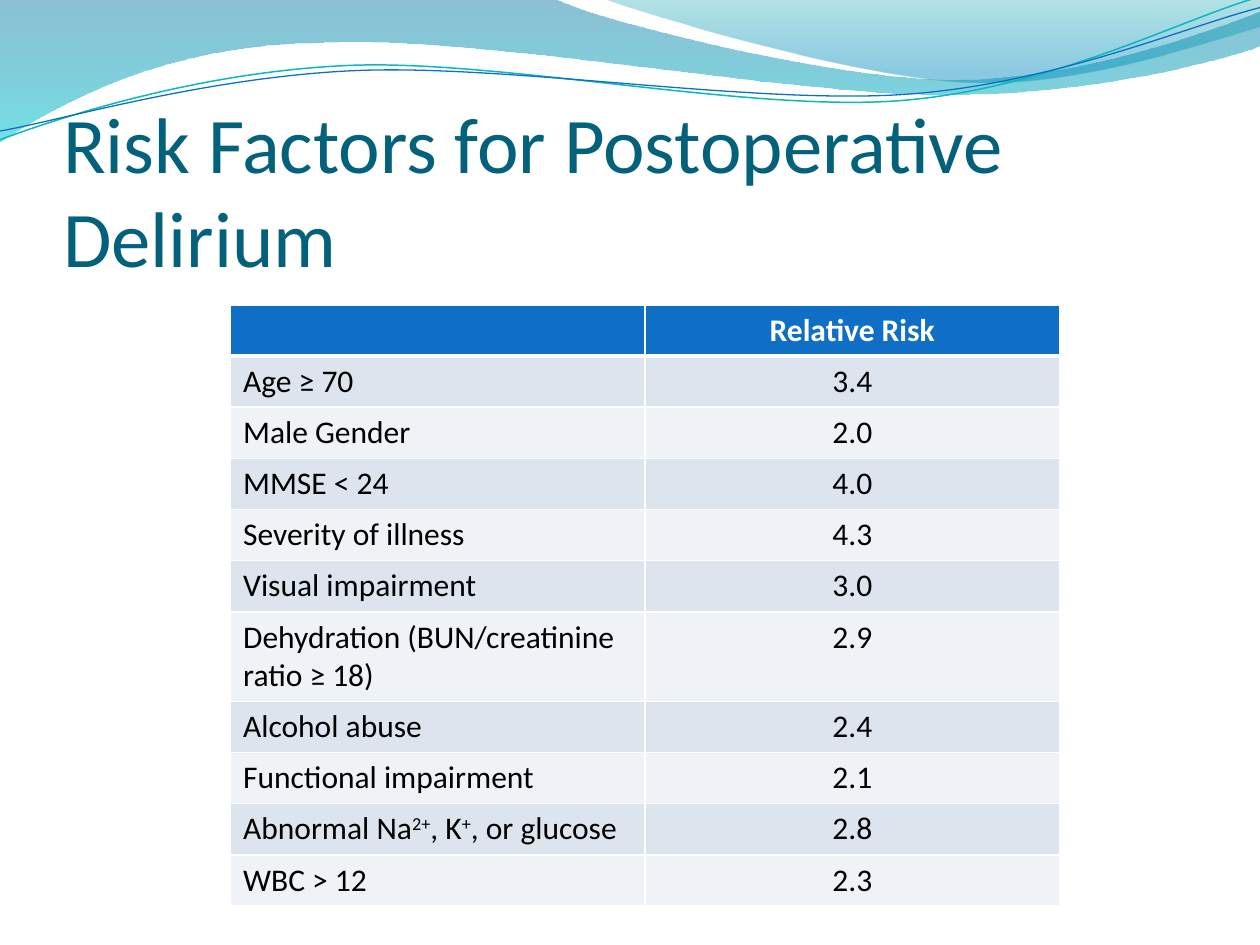
import math

import pptx
import pptx.dml.color
import pptx.enum.text
import pptx.oxml.ns
import pptx.util
from lxml import etree

Inches = pptx.util.Inches
Pt = pptx.util.Pt
RGBColor = pptx.dml.color.RGBColor
PP_ALIGN = pptx.enum.text.PP_ALIGN
qn = pptx.oxml.ns.qn

FONT = "Calibri"
TITLE_TEAL = RGBColor(0x04, 0x61, 0x7B)
HEADER_BLUE = RGBColor(0x0F, 0x6F, 0xC6)
BAND_DARK = RGBColor(0xDC, 0xE5, 0xEE)
BAND_LIGHT = RGBColor(0xEF, 0xF3, 0xF7)
WAVE_BLUE = RGBColor(0x00, 0x74, 0xA1)
WAVE_CYAN = RGBColor(0x00, 0xC6, 0xCF)
CREST_TEAL = RGBColor(0x00, 0xA1, 0xA9)
CREST_BLUE = RGBColor(0x00, 0x8B, 0xBF)
LINE_TEAL = RGBColor(0x0A, 0xB8, 0xBF)
WHITE = RGBColor(0xFF, 0xFF, 0xFF)
BLACK = RGBColor(0x00, 0x00, 0x00)

# Outlines in slide inches: a pair is a straight step,
# six numbers are a cubic curve (two controls and the end).
WAVE = [(0, -0.01), (4.4, -0.01),
        (4.76, 0.17, 6.64, 0.63, 7.58, 0.63), (8.53, 0.63, 9.58, 0.26, 10, 0.09),
        (10.01, 0.36),
        (9.83, 0.44, 8.7, 0.76, 7.46, 0.75), (6.22, 0.75, 3.82, 0.28, 2.57, 0.34),
        (1.29, 0.35, 0.46, 0.83, -0.01, 1.13), (0, -0.01)]
CREST = [(4.79, -0.01),
         (5.09, 0.11, 6.82, 0.62, 7.69, 0.65), (8.56, 0.69, 9.61, 0.32, 10, 0.21),
         (10, 0), (4.79, -0.01)]
TEAL_STRAND = [(0, 1.11),
               (0.48, 0.93, 1.58, 0.57, 2.77, 0.52), (3.95, 0.47, 5.93, 0.89, 7.13, 0.8),
               (8.33, 0.71, 9.38, 0.15, 9.98, -0.02)]
BLUE_STRAND = [(0, 1.04),
               (0.47, 0.96, 1.64, 0.61, 2.83, 0.56), (4.03, 0.51, 5.97, 0.83, 7.17, 0.75),
               (8.36, 0.67, 9.41, 0.21, 10, 0.06)]
STRAND_TILT = -2.7

# Each label is a list of (text, is superscript) runs
RISKS = [
    ([("Age ≥ 70", False)], "3.4"),
    ([("Male Gender", False)], "2.0"),
    ([("MMSE < 24", False)], "4.0"),
    ([("Severity of illness", False)], "4.3"),
    ([("Visual impairment", False)], "3.0"),
    ([("Dehydration (BUN/creatinine ratio ≥ 18)", False)], "2.9"),
    ([("Alcohol abuse", False)], "2.4"),
    ([("Functional impairment", False)], "2.1"),
    ([("Abnormal Na", False), ("2+", True), (", K", False), ("+", True),
      (", or glucose", False)], "2.8"),
    ([("WBC > 12", False)], "2.3"),
]
TALL_ROW = 6


def add_outline(slide, box, steps, close, tilt=0):
    """Draw the steps as one curved outline that fills the box, tilted in degrees."""
    left, top, width, height = (Inches(length) for length in box)
    ends = [(Inches(step[-2]), Inches(step[-1])) for step in steps]
    builder = slide.shapes.build_freeform(*ends[0])
    builder.add_line_segments(ends[1:], close=close)
    outline = builder.convert_to_shape()
    outline.shadow.inherit = False
    outline.left, outline.top, outline.width, outline.height = left, top, width, height
    outline.rotation = tilt % 360

    cos, sin = math.cos(math.radians(-tilt)), math.sin(math.radians(-tilt))

    def add_point(parent, x, y):
        dx, dy = Inches(x) - left - width / 2, Inches(y) - top - height / 2
        etree.SubElement(parent, qn("a:pt"),
                         x=str(round(dx * cos - dy * sin + width / 2)),
                         y=str(round(dx * sin + dy * cos + height / 2)))

    # Swap the straight segments for cubic ones
    curve = next(outline.element.iter(qn("a:path")))
    curve.set("w", str(width))
    curve.set("h", str(height))
    for segment in list(curve):
        curve.remove(segment)
    for i, step in enumerate(steps):
        tag = "a:moveTo" if i == 0 else "a:lnTo" if len(step) == 2 else "a:cubicBezTo"
        segment = etree.SubElement(curve, qn(tag))
        for x, y in zip(step[::2], step[1::2]):
            add_point(segment, x, y)
    if close:
        etree.SubElement(curve, qn("a:close"))
    return outline


def add_wave(slide, box, steps, stops):
    """Stops are (colour, position from 0 to 1, opacity in percent)."""
    wave = add_outline(slide, box, steps, True)
    wave.line.fill.background()
    wave.fill.gradient()
    wave.fill.gradient_angle = 270
    for stop, (color, position, _) in zip(wave.fill.gradient_stops, stops):
        stop.color.rgb = color
        stop.position = position
    for color_xml, (_, _, opacity) in zip(wave.element.iter(qn("a:srgbClr")), stops):
        etree.SubElement(color_xml, qn("a:alpha")).set("val", str(opacity * 1000))


def add_strand(slide, box, steps, color, width):
    strand = add_outline(slide, box, steps, False, STRAND_TILT)
    strand.fill.background()
    strand.line.color.rgb = color
    strand.line.width = Pt(width)


def add_wave_banner(slide):
    add_wave(slide, (-0.01, -0.01, 10.02, 1.14), WAVE,
             [(WAVE_BLUE, 0, 45), (WAVE_CYAN, 1, 55)])
    add_wave(slide, (4.79, -0.01, 5.21, 0.7), CREST,
             [(CREST_TEAL, 0, 30), (CREST_BLUE, 0.8, 45)])
    add_strand(slide, (-0.02, 0.22, 10.02, 0.71), TEAL_STRAND, LINE_TEAL, 0.85)
    add_strand(slide, (-0.02, 0.3, 10.03, 0.58), BLUE_STRAND, HEADER_BLUE, 0.75)


def add_run(paragraph, text, size, color, bold=False, superscript=False):
    run = paragraph.add_run()
    run.text = text
    run.font.name = FONT
    run.font.size = Pt(size)
    run.font.bold = bold
    run.font.color.rgb = color
    if superscript:
        run._r.get_or_add_rPr().set("baseline", "30000")


def place_title(slide, left, top, width, height):
    title = slide.shapes.title
    title.left, title.top, title.width, title.height = left, top, width, height
    frame = title.text_frame
    frame.margin_left = frame.margin_right = frame.margin_bottom = 0
    frame.margin_top = Inches(0.05)
    frame.word_wrap = True
    frame.auto_size = pptx.enum.text.MSO_AUTO_SIZE.NONE
    frame.vertical_anchor = pptx.enum.text.MSO_ANCHOR.BOTTOM
    heading = frame.paragraphs[0]
    heading.alignment = PP_ALIGN.LEFT
    add_run(heading, "Risk Factors for Postoperative Delirium", 45, TITLE_TEAL)
    # The title lies in front of the waves
    title.element.getparent().append(title.element)


def style_cell(cell, fill, top_border, bottom_border):
    properties = cell._tc.get_or_add_tcPr()
    borders = {"a:lnL": 1, "a:lnR": 1, "a:lnT": top_border, "a:lnB": bottom_border}
    for tag, width in borders.items():
        border = etree.SubElement(properties, qn(tag), w=str(Pt(width)))
        border_fill = etree.SubElement(border, qn("a:solidFill"))
        etree.SubElement(border_fill, qn("a:srgbClr"), val=str(WHITE))
    cell.fill.solid()
    cell.fill.fore_color.rgb = fill


def add_risk_table(slide, left, top, width, height):
    rows = [([], "Relative Risk")] + RISKS
    table = slide.shapes.add_table(len(rows), 2, left, top, width, height).table
    tall_height = Inches(0.7)
    row_height = (height - tall_height) // (len(rows) - 1)
    for r, (label, risk) in enumerate(rows):
        header = r == 0
        table.rows[r].height = tall_height if r == TALL_ROW else row_height
        fill = HEADER_BLUE if header else BAND_DARK if r % 2 else BAND_LIGHT
        color = WHITE if header else BLACK
        label_cell, risk_cell = table.cell(r, 0), table.cell(r, 1)
        for cell in (label_cell, risk_cell):
            style_cell(cell, fill, 3 if r == 1 else 1, 3 if header else 1)
        for text, superscript in label:
            add_run(label_cell.text_frame.paragraphs[0], text, 18, color,
                    superscript=superscript)
        risk_paragraph = risk_cell.text_frame.paragraphs[0]
        risk_paragraph.alignment = PP_ALIGN.CENTER
        add_run(risk_paragraph, risk, 18, color, bold=header)


def main():
    deck = pptx.Presentation()
    deck.slide_width, deck.slide_height = Inches(10), Inches(7.5)
    slide = deck.slides.add_slide(deck.slide_layouts[5])
    add_wave_banner(slide)
    place_title(slide, Inches(0.5), Inches(1), Inches(9), Inches(1.25))
    add_risk_table(slide, Inches(1.83), Inches(2.42), Inches(6.58), Inches(4.76))
    deck.save("out.pptx")


if __name__ == "__main__":
    main()
